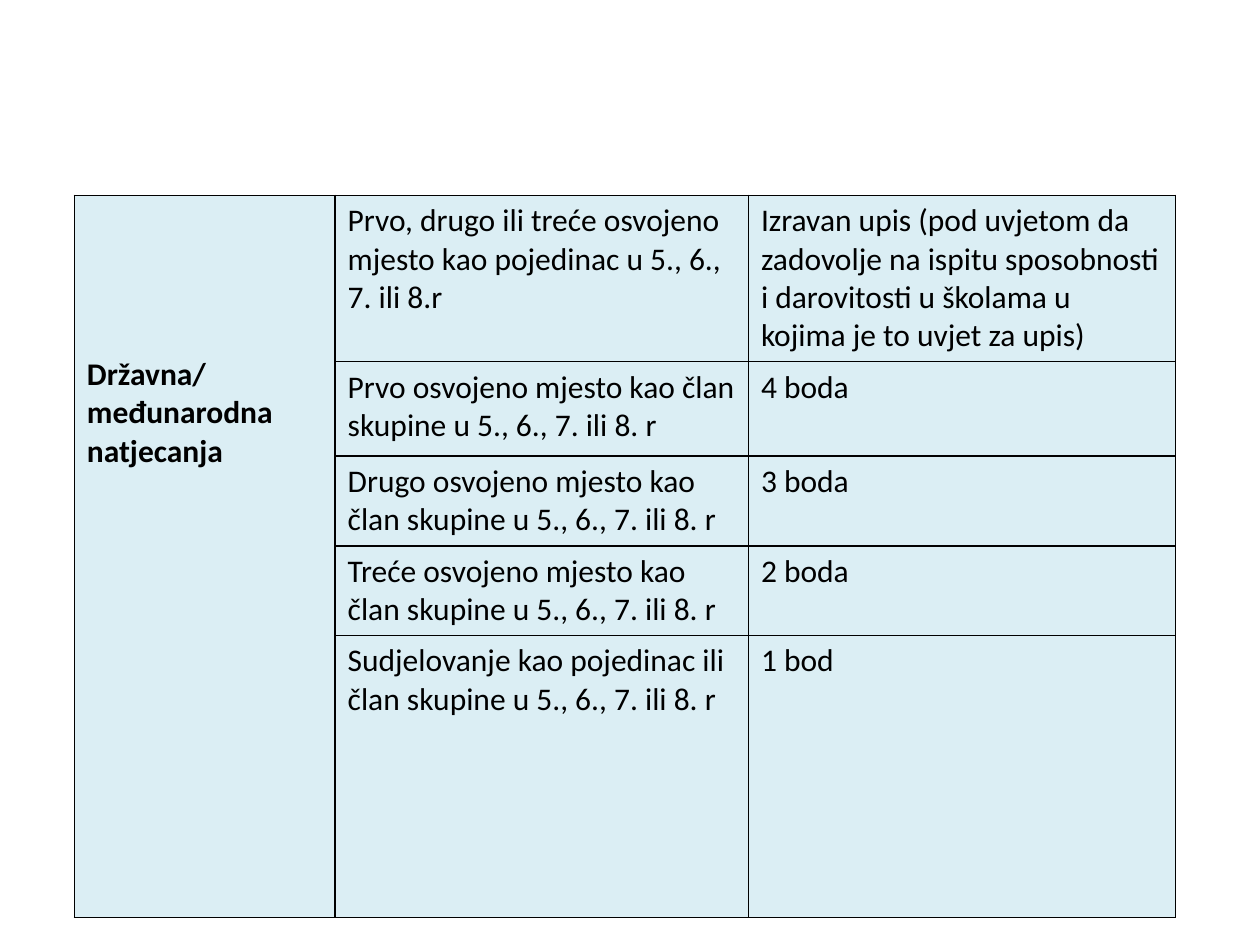
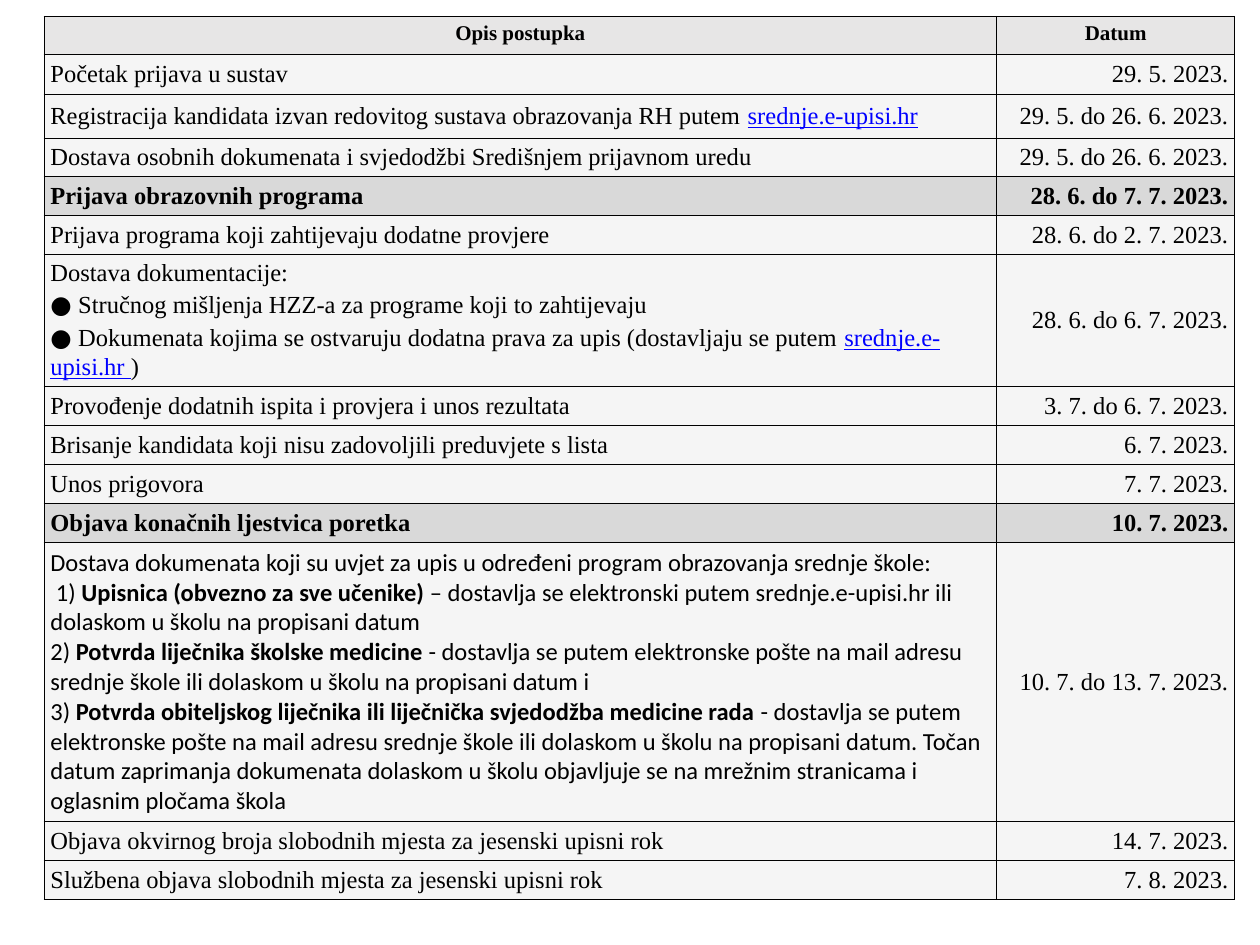
from dataclasses import dataclass
from typing import NamedTuple

from lxml import etree
from pptx import Presentation
from pptx.dml.color import RGBColor
from pptx.enum.text import MSO_ANCHOR, PP_ALIGN
from pptx.oxml.ns import qn
from pptx.slide import Slide
from pptx.table import Table, _Cell
from pptx.util import Inches, Pt

LEFT, CENTER, RIGHT = PP_ALIGN.LEFT, PP_ALIGN.CENTER, PP_ALIGN.RIGHT
TOP, MIDDLE = MSO_ANCHOR.TOP, MSO_ANCHOR.MIDDLE

BLACK = RGBColor(0x00, 0x00, 0x00)
LINK_BLUE = RGBColor(0x00, 0x00, 0xFF)
PALE_BLUE = RGBColor(0xDB, 0xEE, 0xF4)
HEADER_GRAY = RGBColor(0xE7, 0xE6, 0xE6)
STAGE_GRAY = RGBColor(0xD9, 0xD9, 0xD9)
ROW_GRAY = RGBColor(0xF5, 0xF5, 0xF5)

SANS, SERIF, BULLET_FONT = "Calibri", "Times New Roman", "Open Sans"
BORDER_SIDES = ("a:lnL", "a:lnR", "a:lnT", "a:lnB")


class Span(NamedTuple):
    text: str
    bold: bool = False
    link: bool = False
    font: str | None = None


Line = tuple[Span, ...]


@dataclass(frozen=True)
class CellStyle:
    fill: RGBColor
    font: str
    size: float
    bold: bool = False
    alignment: PP_ALIGN = LEFT
    anchor: MSO_ANCHOR = TOP
    margin_x: float = 0.1
    margin_y: float = 0.05
    border: float = 1


@dataclass(frozen=True)
class Step:
    description: str | tuple[Line, ...]
    date: str
    height: float = 0.31
    fill: RGBColor = ROW_GRAY
    bold: bool = False
    font: str = SERIF


BULLET = Span("● ", font=BULLET_FONT)

AWARDS = [
    ("Prvo, drugo ili treće osvojeno mjesto kao pojedinac u 5., 6., 7. ili 8.r",
     "Izravan upis (pod uvjetom da zadovolje na ispitu sposobnosti i darovitosti "
     "u školama u kojima je to uvjet za upis)", 1.32),
    ("Prvo osvojeno mjesto kao član skupine u 5., 6., 7. ili 8. r", "4 boda", 0.75),
    ("Drugo osvojeno mjesto kao član skupine u 5., 6., 7. ili 8. r", "3 boda", 0.71),
    ("Treće osvojeno mjesto kao član skupine u 5., 6., 7. ili 8. r", "2 boda", 0.71),
    ("Sudjelovanje kao pojedinac ili član skupine u 5., 6., 7. ili 8. r", "1 bod", 2.24),
]

DOCUMENTATION = (
    (Span("Dostava dokumentacije:"),),
    (BULLET, Span("Stručnog mišljenja HZZ-a za programe koji to zahtijevaju")),
    (BULLET,
     Span("Dokumenata kojima se ostvaruju dodatna prava za upis (dostavljaju se putem "),
     Span("srednje.e-upisi.hr ", link=True), Span(")")),
)

ENROLMENT_DOCUMENTS = (
    (Span("Dostava dokumenata koji su uvjet za upis u određeni program obrazovanja "
          "srednje škole:"),),
    (Span(" 1) "), Span("Upisnica (obvezno za sve učenike) ", bold=True),
     Span("– dostavlja se elektronski putem srednje.e-upisi.hr ili dolaskom u školu "
          "na propisani datum")),
    (Span("2) "), Span("Potvrda liječnika školske medicine ", bold=True),
     Span("- dostavlja se putem elektronske pošte na mail adresu srednje škole ili "
          "dolaskom u školu na propisani datum i")),
    (Span("3) "),
     Span("Potvrda obiteljskog liječnika ili liječnička svjedodžba medicine rada ", bold=True),
     Span("- dostavlja se putem elektronske pošte na mail adresu srednje škole ili "
          "dolaskom u školu na propisani datum. Točan datum zaprimanja dokumenata "
          "dolaskom u školu objavljuje se na mrežnim stranicama i oglasnim pločama škola")),
)

STEPS = [
    Step("Početak prijava u sustav", "29. 5. 2023.", 0.32),
    Step(((Span("Registracija kandidata izvan redovitog sustava obrazovanja RH putem "),
           Span("srednje.e-upisi.hr", link=True)),), "29. 5. do 26. 6. 2023.", 0.35),
    Step("Dostava osobnih dokumenata i svjedodžbi Središnjem prijavnom uredu",
         "29. 5. do 26. 6. 2023.", 0.3),
    Step("Prijava obrazovnih programa", "28. 6. do 7. 7. 2023.", fill=STAGE_GRAY, bold=True),
    Step("Prijava programa koji zahtijevaju dodatne provjere", "28. 6. do 2. 7. 2023."),
    Step(DOCUMENTATION, "28. 6. do 6. 7. 2023.", 1.05),
    Step("Provođenje dodatnih ispita i provjera i unos rezultata", "3. 7. do 6. 7. 2023."),
    Step("Brisanje kandidata koji nisu zadovoljili preduvjete s lista", "6. 7. 2023."),
    Step("Unos prigovora", "7. 7. 2023."),
    Step("Objava konačnih ljestvica poretka", "10. 7. 2023.", fill=STAGE_GRAY, bold=True),
    Step(ENROLMENT_DOCUMENTS, "10. 7. do 13. 7. 2023.", 2.21, font=SANS),
    Step("Objava okvirnog broja slobodnih mjesta za jesenski upisni rok", "14. 7. 2023."),
    Step("Službena objava slobodnih mjesta za jesenski upisni rok", "7. 8. 2023."),
]


def add_plain_table(slide: Slide, left: float, top: float,
                    widths: list[float], heights: list[float]) -> Table:
    table = slide.shapes.add_table(
        len(heights), len(widths), Inches(left), Inches(top),
        Inches(sum(widths)), Inches(sum(heights))).table
    table.first_row = False
    table.horz_banding = False
    for column, width in zip(table.columns, widths):
        column.width = Inches(width)
    for row, height in zip(table.rows, heights):
        row.height = Inches(height)
    return table


def style_cell(cell: _Cell, style: CellStyle) -> None:
    cell.margin_left = cell.margin_right = Inches(style.margin_x)
    cell.margin_top = cell.margin_bottom = Inches(style.margin_y)
    cell.vertical_anchor = style.anchor
    properties = cell._tc.get_or_add_tcPr()
    for side in BORDER_SIDES:
        line = etree.SubElement(properties, qn(side), w=str(Pt(style.border)))
        fill = etree.SubElement(line, qn("a:solidFill"))
        etree.SubElement(fill, qn("a:srgbClr"), val=str(BLACK))
    cell.fill.solid()
    cell.fill.fore_color.rgb = style.fill


def write_cell(cell: _Cell, content: str | tuple[Line, ...], style: CellStyle) -> None:
    style_cell(cell, style)
    lines = ((Span(content),),) if isinstance(content, str) else content
    text_frame = cell.text_frame
    for index, spans in enumerate(lines):
        paragraph = text_frame.add_paragraph() if index else text_frame.paragraphs[0]
        paragraph.alignment = style.alignment
        paragraph.font.name = style.font
        paragraph.font.size = Pt(style.size)
        paragraph.font.bold = style.bold
        paragraph.font.color.rgb = BLACK
        for span in spans:
            run = paragraph.add_run()
            run.text = span.text
            run.font.name = span.font or style.font
            run.font.size = Pt(style.size)
            run.font.bold = span.bold or style.bold
            run.font.color.rgb = LINK_BLUE if span.link else BLACK
            if span.link:
                run.font.underline = True


def build_awards(slide: Slide) -> None:
    table = add_plain_table(slide, 0.59, 1.55, [2.07, 3.28, 3.39],
                            [height for _, _, height in AWARDS])
    style = CellStyle(PALE_BLUE, SANS, 18)
    for index, (achievement, points, _) in enumerate(AWARDS):
        if index:
            style_cell(table.cell(index, 0), style)
        write_cell(table.cell(index, 1), achievement, style)
        write_cell(table.cell(index, 2), points, style)
    level = table.cell(0, 0)
    write_cell(level, "Državna/ međunarodna natjecanja",
               CellStyle(PALE_BLUE, SANS, 18, bold=True))
    level.margin_top = Inches(1.27)
    level.merge(table.cell(len(AWARDS) - 1, 0))


def build_schedule(slide: Slide) -> None:
    table = add_plain_table(slide, 0.35, 0.13, [7.56, 1.89],
                            [0.3] + [step.height for step in STEPS])
    compact = {"margin_x": 0.05, "margin_y": 0.04, "border": 0.75}
    header = CellStyle(HEADER_GRAY, SERIF, 12, True, CENTER, **compact)
    for column, title in enumerate(("Opis postupka", "Datum")):
        write_cell(table.cell(0, column), title, header)
    for row, step in enumerate(STEPS, start=1):
        write_cell(table.cell(row, 0), step.description,
                   CellStyle(step.fill, step.font, 14, step.bold, LEFT, MIDDLE, **compact))
        write_cell(table.cell(row, 1), step.date,
                   CellStyle(step.fill, SERIF, 14, step.bold, RIGHT, MIDDLE, **compact))


def main() -> None:
    presentation = Presentation()
    presentation.slide_width = Inches(10)
    presentation.slide_height = Inches(7.5)
    blank = presentation.slide_layouts[6]
    for build in (build_awards, build_schedule):
        build(presentation.slides.add_slide(blank))
    presentation.save("out.pptx")


if __name__ == "__main__":
    main()
